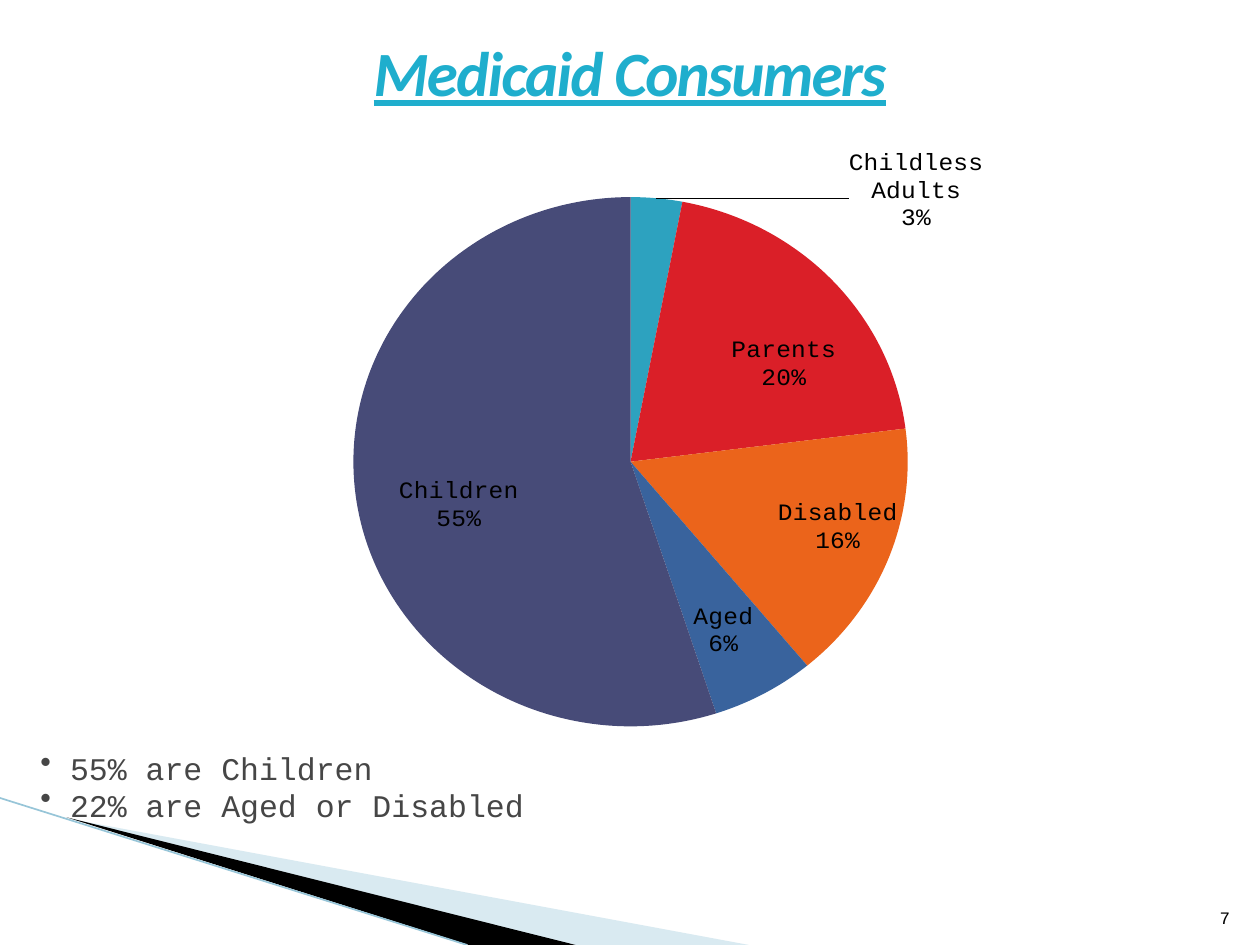
import pptx
import pptx.chart.data
import pptx.dml.color
import pptx.enum.chart
import pptx.enum.shapes
import pptx.enum.text
import pptx.oxml
import pptx.oxml.ns
import pptx.util
from dataclasses import dataclass
from lxml import etree

Pt = pptx.util.Pt
qn = pptx.oxml.ns.qn
Align = pptx.enum.text.PP_ALIGN
Anchor = pptx.enum.text.MSO_ANCHOR
LabelPos = pptx.enum.chart.XL_LABEL_POSITION


@dataclass(frozen=True)
class Theme:
    head_font: str = "Calibri"
    body_font: str = "Courier New"
    title: str = "1FAECD"
    body: str = "464646"
    black: str = "000000"
    swoosh: str = "A0CBDC"
    edge: str = "97C5D8"
    slices: tuple = ("2DA2BF", "DA1F28", "EB641B", "39639D", "474B78")
    title_size: int = 36
    body_size: int = 18
    label_size: int = 14
    small_size: int = 10


def rgb(value):
    return pptx.dml.color.RGBColor.from_string(value)


def manual_layout(x, y, w=None, h=None):
    """Return a c:layout element: an offset, or an inner plot area if sized."""
    layout = etree.Element(qn("c:layout"))
    manual = etree.SubElement(layout, qn("c:manualLayout"))
    parts = [("x", x), ("y", y)]
    if w is not None:
        parts = [("layoutTarget", "inner"), ("xMode", "edge"), ("yMode", "edge"),
                 *parts, ("w", w), ("h", h)]
    for name, value in parts:
        etree.SubElement(manual, qn(f"c:{name}"), val=str(value))
    return layout


class SlideBuilder:
    def __init__(self, prs, theme):
        self.theme = theme
        self.s = prs.slides.add_slide(prs.slide_layouts[6])

    def style(self, font, size, color, name=None):
        font.name = name or self.theme.body_font
        font.size = Pt(size)
        font.color.rgb = rgb(color)

    def polygon(self, points, color, alpha=None):
        fb = self.s.shapes.build_freeform(*points[0], scale=Pt(1))
        fb.add_line_segments(points[1:], close=True)
        sp = fb.convert_to_shape()
        sp.shadow.inherit = False
        sp.fill.solid()
        sp.fill.fore_color.rgb = rgb(color)
        sp.line.fill.background()
        if alpha:
            clr = sp.fill._xPr.find(".//" + qn("a:srgbClr"))
            etree.SubElement(clr, qn("a:alpha"), val=str(alpha * 1000))

    def line(self, x1, y1, x2, y2, color, width):
        ln = self.s.shapes.add_connector(
            pptx.enum.shapes.MSO_CONNECTOR.STRAIGHT, Pt(x1), Pt(y1), Pt(x2), Pt(y2))
        ln.line.color.rgb = rgb(color)
        ln.line.width = Pt(width)
        etree.SubElement(ln._element.spPr, qn("a:effectLst"))

    def text(self, box, lines, size, color, name=None, align=Align.LEFT,
             anchor=Anchor.TOP, bullet=False):
        """Add a text box and return its runs."""
        tf = self.s.shapes.add_textbox(*map(Pt, box)).text_frame
        tf.word_wrap = True
        tf.vertical_anchor = anchor
        runs = []
        for i, line in enumerate(lines):
            p = tf.add_paragraph() if i else tf.paragraphs[0]
            p.alignment = align
            if bullet:
                p.line_spacing = 0.5
                if i:
                    p.space_before = Pt(10)
                pPr = p._p.get_or_add_pPr()
                pPr.set("marL", str(Pt(17)))
                pPr.set("indent", str(-Pt(17)))
                etree.SubElement(pPr, qn("a:buChar"), char="•")
            r = p.add_run()
            r.text = line
            self.style(r.font, size, color, name)
            runs.append(r)
        return runs

    def pie(self, box, plot_area, slices):
        """slices: (category, value, label position, label offset)."""
        t = self.theme
        data = pptx.chart.data.CategoryChartData(number_format="0%")
        data.categories = [row[0] for row in slices]
        data.add_series("Series 1", [row[1] for row in slices])
        chart = self.s.shapes.add_chart(
            pptx.enum.chart.XL_CHART_TYPE.PIE, *map(Pt, box), data).chart
        chart.has_legend = False
        chart.has_title = False
        self.style(chart.font, t.small_size, t.black)
        plot = chart.plots[0]
        plot.vary_by_categories = True
        area = chart._chartSpace.find(".//" + qn("c:plotArea"))
        for old in area.findall(qn("c:layout")):
            area.remove(old)
        area.insert(0, manual_layout(*plot_area))

        # Series labels: category over value
        ser = plot.series[0]
        labels = ser.data_labels
        labels.show_value = True
        labels.show_category_name = True
        labels.number_format = "0%"
        labels.number_format_is_linked = False
        self.style(labels.font, t.label_size, t.black)

        # Slice colours and label places
        for i, (_, _, position, offset) in enumerate(slices):
            point = ser.points[i]
            point.format.fill.solid()
            point.format.fill.fore_color.rgb = rgb(t.slices[i])
            point.format.line.fill.background()
            point.data_label.position = position
            self.style(point.data_label.font, t.label_size, t.black)
            dLbl = labels._element.findall(qn("c:dLbl"))[i]
            dLbl.insert(1, manual_layout(*offset))
            dLbl.insert(2, etree.Element(
                qn("c:numFmt"), formatCode="0%", sourceLinked="0"))
            dLbl.find(qn("c:showCatName")).set("val", "1")

        for size in labels._element.findall(".//" + qn("c:showBubbleSize")):
            separator = etree.Element(qn("c:separator"))
            separator.text = "\n"
            size.addnext(separator)


def main():
    prs = pptx.Presentation()
    prs.slide_width, prs.slide_height = Pt(720), Pt(540)
    t = Theme()
    b = SlideBuilder(prs, t)

    # Corner decoration
    b.polygon([(40, 468), (428, 540), (328, 540)], t.swoosh, alpha=40)
    b.polygon([(38, 467), (329, 540), (268, 540)], t.black)
    b.line(0, 456, 267, 540, t.edge, 0.95)

    # Pie chart
    b.pie((111.6, 62, 497.5, 360), (0.18, 0.1, 0.64, 0.88), [
        ("Childless Adults", 0.03, LabelPos.OUTSIDE_END, (0.22, 0.07)),
        ("Parents", 0.2, LabelPos.CENTER, (0.06, -0.01)),
        ("Disabled", 0.16, LabelPos.CENTER, (0.09, 0.03)),
        ("Aged", 0.06, LabelPos.CENTER, (0.03, 0.09)),
        ("Children", 0.55, LabelPos.CENTER, (-0.04, 0.04)),
    ])

    # Title
    r = b.text((0, 18, 720, 46), ["Medicaid Consumers"], t.title_size, t.title,
               t.head_font, Align.CENTER, Anchor.MIDDLE)[0]
    r.font.bold = r.font.italic = r.font.underline = True
    r._r.get_or_add_rPr().set("spc", "-100")

    # Key figures
    b.text((16, 434, 360, 40), ["55% are Children", "22% are Aged or Disabled"],
           t.body_size, t.body, bullet=True)

    # Slide number
    b.text((681, 505, 29, 29), ["7"], t.small_size, t.black,
           align=Align.RIGHT, anchor=Anchor.BOTTOM)

    prs.save("out.pptx")


if __name__ == "__main__":
    main()
